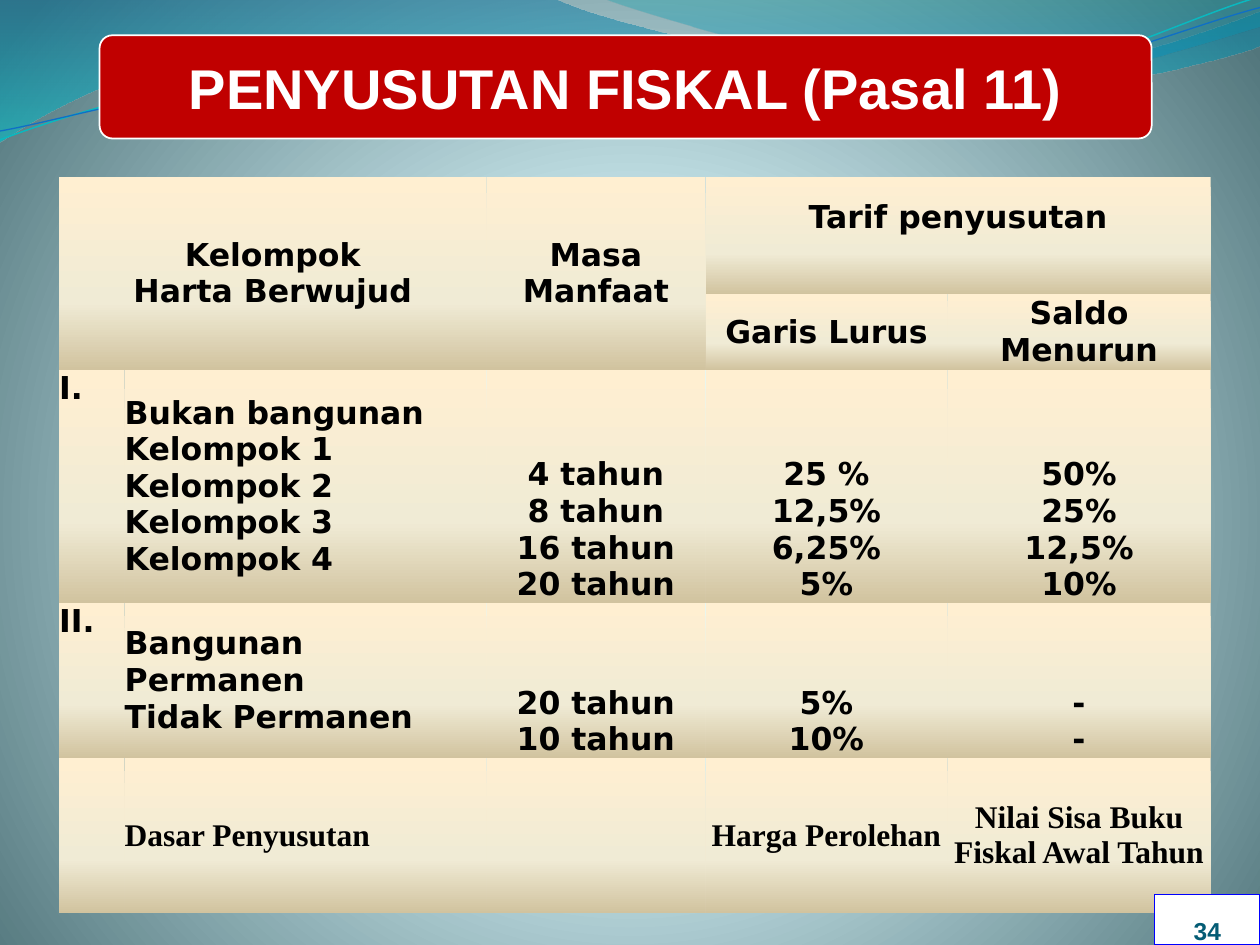
from dataclasses import dataclass
from typing import Any, Optional

from lxml.etree import SubElement
from pptx import Presentation
from pptx.dml.color import RGBColor
from pptx.enum.shapes import MSO_SHAPE as Shape
from pptx.enum.text import MSO_ANCHOR as Anchor, MSO_AUTO_SIZE as AutoSize, PP_ALIGN as Align
from pptx.oxml import parse_xml
from pptx.oxml.ns import nsdecls, qn
from pptx.util import Emu, Inches, Pt

WIDTH, HEIGHT = Inches(10), Inches(7.5)
BLACK, WHITE = RGBColor(0, 0, 0), RGBColor(255, 255, 255)
RED, BLUE = RGBColor(0xC0, 0, 0), RGBColor(0, 0, 0xFF)
DEEP_TEAL = RGBColor(0x04, 0x5C, 0x75)
CURVE_TEAL, CURVE_BLUE = RGBColor(0x0A, 0xB8, 0xBF), RGBColor(0x0F, 0x6F, 0xC6)

# Gradient stops: position %, colour, opacity %
BACKDROP = [(0, RGBColor(0xDE, 0xFB, 0xFF), 100), (25, RGBColor(0xDD, 0xFA, 0xFF), 100),
            (100, RGBColor(0x52, 0x76, 0x7C), 100)]
SAND = [(0, RGBColor(0xFF, 0xEF, 0xD1), 100), (65, RGBColor(0xF0, 0xEB, 0xD5), 100),
        (100, RGBColor(0xD1, 0xC3, 0x9F), 100)]
LEFT_WAVE = [(0, RGBColor(0, 0x74, 0xA1), 45), (100, RGBColor(0, 0xC6, 0xCF), 55)]
RIGHT_WAVE = [(0, RGBColor(0, 0xA1, 0xA9), 30), (80, RGBColor(0, 0x8B, 0xBF), 45)]
DOWNWARD = '<a:lin ang="5400000" scaled="0"/>'
RADIAL = ('<a:path path="circle"><a:fillToRect l="10000" t="110000" '
          'r="10000" b="100000"/></a:path>')


@dataclass
class Box:
    """Place on the slide, in percent of its width and height."""
    left: float
    top: float
    width: float
    height: float

    def lengths(self) -> list[Emu]:
        return [Emu(round(share * side / 100)) for share, side in
                zip((self.left, self.top, self.width, self.height), (WIDTH, HEIGHT) * 2)]


@dataclass
class Wave:
    """Outline in inches: a pair is a line's end, six numbers are a cubic curve."""
    start: tuple
    steps: list
    gradient: Optional[list] = None
    line: Optional[RGBColor] = None
    line_width: float = 0.75


@dataclass
class CellText:
    row: int
    column: int
    text: str
    anchor: Any = Anchor.MIDDLE
    align: Any = Align.CENTER
    font: str = "DejaVu Sans"
    rows: int = 1
    columns: int = 1
    margin_bottom: float = 0


WAVES = [
    Wave((0, -0.01), [(4.4, -0.01), (4.76, 0.17, 6.64, 0.63, 7.58, 0.63),
                      (8.53, 0.63, 9.58, 0.26, 10, 0.09), (10.01, 0.36),
                      (9.83, 0.44, 8.7, 0.76, 7.46, 0.75), (6.22, 0.75, 3.82, 0.28, 2.57, 0.34),
                      (1.29, 0.35, 0.46, 0.83, -0.01, 1.13)], LEFT_WAVE),
    Wave((4.79, -0.01), [(5.09, 0.11, 6.82, 0.62, 7.69, 0.65),
                         (8.56, 0.69, 9.61, 0.32, 10, 0.21), (10, 0)], RIGHT_WAVE),
    Wave((0, 1.11), [(0.48, 0.93, 1.58, 0.57, 2.77, 0.52), (3.95, 0.47, 5.93, 0.89, 7.13, 0.8),
                     (8.33, 0.71, 9.38, 0.15, 9.98, -0.02)], line=CURVE_TEAL, line_width=0.85),
    Wave((0, 1.04), [(0.47, 0.96, 1.64, 0.61, 2.83, 0.56), (4.03, 0.51, 5.97, 0.83, 7.17, 0.75),
                     (8.36, 0.67, 9.41, 0.21, 10, 0.06)], line=CURVE_BLUE),
]

TITLE_BOX = Box(7.9, 3.73, 83.5, 10.93)
TABLE_BOX = Box(4.7, 18.75, 91.4, 77.87)
NUMBER_BOX = Box(91.65, 94.67, 8.35, 5.33)
COLUMN_SHARES = [0.52, 2.87, 1.74, 1.92, 2.09]
ROW_SHARES = [0.93, 0.6, 1.85, 1.23, 1.23]
PLAIN_TABLE_STYLE = "{2D5ABB26-0587-4C30-8999-92F81FD0307C}"
SERIF = "Times New Roman"

HEADINGS = [
    CellText(0, 0, "Kelompok\nHarta Berwujud", rows=2, columns=2),
    CellText(0, 2, "Masa\nManfaat", rows=2),
    CellText(0, 3, "Tarif penyusutan", columns=2, margin_bottom=0.29),
    CellText(1, 3, "Garis Lurus"),
    CellText(1, 4, "Saldo Menurun"),
]
# Each group: numeral, names, then useful life and the two rates
GROUPS = [
    ("I.", "Bukan bangunan\nKelompok 1\nKelompok 2\nKelompok 3\nKelompok 4",
     "4 tahun\n8 tahun\n16 tahun\n20 tahun", "25 %\n12,5%\n6,25%\n5%", "50%\n25%\n12,5%\n10%"),
    ("II.", "Bangunan\nPermanen\nTidak Permanen", "20 tahun\n10 tahun", "5%\n10%", "-\n-"),
]
GROUP_FORMATS = [(Anchor.TOP, Align.LEFT), (Anchor.MIDDLE, Align.LEFT)] \
    + [(Anchor.BOTTOM, Align.CENTER)] * 3
GROUP_CELLS = [CellText(row, column, text, *GROUP_FORMATS[column])
               for row, group in enumerate(GROUPS, 2) for column, text in enumerate(group)]
BASIS_CELLS = [
    CellText(4, 1, "Dasar Penyusutan", align=Align.LEFT, font=SERIF),
    CellText(4, 3, "Harga Perolehan", font=SERIF),
    CellText(4, 4, "Nilai Sisa Buku Fiskal Awal Tahun", font=SERIF),
]


def set_all(target: Any, values: dict) -> None:
    for name, value in values.items():
        setattr(target, name, value)


def fill_gradient(fill: Any, element: Any, stops: list, direction: str = DOWNWARD) -> None:
    fill.background()
    marks = "".join(f'<a:gs pos="{position * 1000}"><a:srgbClr val="{color}">'
                    f'<a:alpha val="{opacity * 1000}"/></a:srgbClr></a:gs>'
                    for position, color, opacity in stops)
    empty = element.find(".//" + qn("a:noFill"))
    empty.getparent().replace(empty, parse_xml(
        f'<a:gradFill {nsdecls("a")} rotWithShape="1"><a:gsLst>{marks}</a:gsLst>'
        f'{direction}</a:gradFill>'))


def write(frame: Any, text: str, size: float, font: str, color: RGBColor, align: Any) -> None:
    frame.text = text.replace("\n", "\v")
    paragraph = frame.paragraphs[0]
    paragraph.alignment = align
    for run in paragraph.runs:
        set_all(run.font, {"size": Pt(size), "name": font, "bold": True})
        run.font.color.rgb = color


def draw_card(slide: Any, kind: Any, box: Box, fill: RGBColor, line: RGBColor,
              line_width: float) -> Any:
    shape = slide.shapes.add_shape(kind, *box.lengths())
    shape.fill.solid()
    shape.fill.fore_color.rgb = fill
    shape.line.color.rgb = line
    shape.line.width = Pt(line_width)
    shape.shadow.inherit = False
    return shape


def draw_wave(slide: Any, wave: Wave) -> None:
    builder = slide.shapes.build_freeform(*map(Inches, wave.start))
    for step in wave.steps:
        corners = [(Inches(x), Inches(y)) for x, y in zip(step[::2], step[1::2])]
        builder.add_line_segments(corners, close=False)
    shape = builder.convert_to_shape()
    shape.shadow.inherit = False
    # Join the three corners of each curve into one Bézier segment
    segments = iter(list(shape._element.iter(qn("a:lnTo"))))
    for step in wave.steps:
        group = [next(segments) for _ in step[::2]]
        if len(group) == 3:
            curve = SubElement(group[0].getparent(), qn("a:cubicBezTo"))
            group[0].addprevious(curve)
            for segment in group:
                curve.append(segment[0])
                segment.getparent().remove(segment)
    if wave.gradient:
        SubElement(next(shape._element.iter(qn("a:moveTo"))).getparent(), qn("a:close"))
        fill_gradient(shape.fill, shape._element, wave.gradient)
        shape.line.fill.background()
    else:
        shape.fill.background()
        shape.line.color.rgb = wave.line
        shape.line.width = Pt(wave.line_width)


def draw_title(slide: Any, text: str) -> None:
    card = draw_card(slide, Shape.ROUNDED_RECTANGLE, TITLE_BOX, RED, WHITE, 1)
    card.adjustments[0] = 0.125
    title = slide.shapes.title
    set_all(title, dict(zip(("left", "top", "width", "height"), TITLE_BOX.lengths())))
    set_all(title.text_frame, {"auto_size": AutoSize.NONE, "word_wrap": False,
                               "vertical_anchor": Anchor.MIDDLE})
    write(title.text_frame, text, 32, "Arial", WHITE, Align.CENTER)
    card._element.addnext(title._element)  # in front of its card


def draw_table(slide: Any, texts: list[CellText]) -> None:
    left, top, width, height = TABLE_BOX.lengths()
    table = slide.shapes.add_table(len(ROW_SHARES), len(COLUMN_SHARES),
                                   left, top, width, height).table
    set_all(table, {"first_row": False, "horz_banding": False})
    table._tbl.tblPr.find(qn("a:tableStyleId")).text = PLAIN_TABLE_STYLE
    for column, share in zip(table.columns, COLUMN_SHARES):
        column.width = round(width * share / sum(COLUMN_SHARES))
    for row, share in zip(table.rows, ROW_SHARES):
        row.height = round(height * share / sum(ROW_SHARES))
    for cell in table.iter_cells():
        set_all(cell, {f"margin_{side}": 0 for side in ("left", "top", "right", "bottom")})
        fill_gradient(cell.fill, cell._tc, SAND)
    for item in texts:
        cell = table.cell(item.row, item.column)
        if item.rows * item.columns > 1:
            cell.merge(table.cell(item.row + item.rows - 1, item.column + item.columns - 1))
        set_all(cell, {"vertical_anchor": item.anchor,
                       "margin_bottom": Inches(item.margin_bottom)})
        write(cell.text_frame, item.text, 18, item.font, BLACK, item.align)


def draw_number(slide: Any, text: str) -> None:
    frame = draw_card(slide, Shape.RECTANGLE, NUMBER_BOX, WHITE, BLUE, 0.75).text_frame
    set_all(frame, {"margin_left": 0, "margin_top": 0, "margin_right": 0,
                    "margin_bottom": 0, "vertical_anchor": Anchor.BOTTOM})
    write(frame, text, 14, "Arial", DEEP_TEAL, Align.CENTER)


def main() -> None:
    presentation = Presentation()
    set_all(presentation, {"slide_width": WIDTH, "slide_height": HEIGHT})
    slide = presentation.slides.add_slide(presentation.slide_layouts[5])
    fill_gradient(slide.background.fill, slide._element, BACKDROP, RADIAL)
    for wave in WAVES:
        draw_wave(slide, wave)
    draw_title(slide, "PENYUSUTAN FISKAL (Pasal 11)")
    draw_table(slide, HEADINGS + GROUP_CELLS + BASIS_CELLS)
    draw_number(slide, "34")
    presentation.save("out.pptx")


if __name__ == "__main__":
    main()
